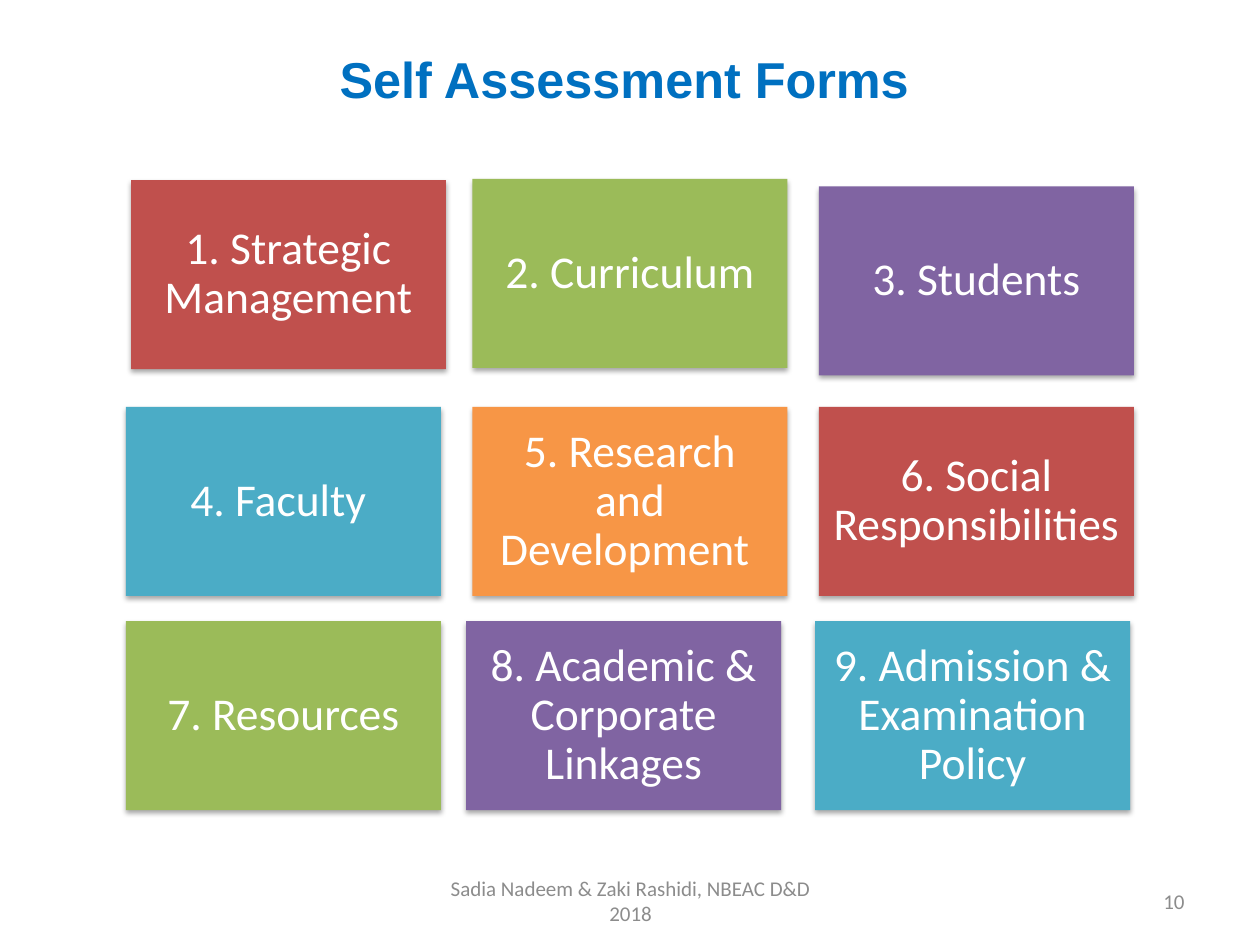
"""Build the Self Assessment Forms slide."""
from lxml.etree import SubElement
from pptx import Presentation
from pptx.dml.color import RGBColor
from pptx.enum.shapes import MSO_SHAPE
from pptx.enum.text import MSO_ANCHOR, PP_ALIGN
from pptx.oxml.ns import qn
from pptx.util import Inches, Pt

WHITE = RGBColor(0xFF, 0xFF, 0xFF)
BLUE = RGBColor(0x00, 0x70, 0xC0)
GRAY = RGBColor(0x8C, 0x8C, 0x8C)
RED = RGBColor(0xC0, 0x50, 0x4D)
GREEN = RGBColor(0x9B, 0xBB, 0x59)
PURPLE = RGBColor(0x80, 0x64, 0xA2)
TEAL = RGBColor(0x4B, 0xAC, 0xC6)
ORANGE = RGBColor(0xF7, 0x96, 0x46)

TITLE = "Self Assessment Forms"
FOOTER = "Sadia Nadeem & Zaki Rashidi, NBEAC D&D 2018"
PAGE_NUMBER = "10"
FORMS = [
    ("1. Strategic Management", 1.04, 1.43),
    ("2. Curriculum", 3.75, 1.42),
    ("3. Students", 6.5, 1.48),
    ("4. Faculty ", 1, 3.23),
    ("5. Research and Development ", 3.75, 3.23),
    ("6. Social Responsibilities", 6.5, 3.23),
    ("7. Resources", 1, 4.93),
    ("8. Academic & Corporate Linkages", 3.7, 4.93),
    ("9. Admission & Examination Policy", 6.47, 4.93),
]
FILLS = [RED, GREEN, PURPLE, TEAL, ORANGE]
TILE_WIDTH, TILE_HEIGHT, TILE_INSET = 2.5, 1.5, 0.11


def write(shape, text, size, color, align=PP_ALIGN.CENTER, font="Calibri", bold=False):
    frame = shape.text_frame
    frame.word_wrap = True
    frame.vertical_anchor = MSO_ANCHOR.MIDDLE
    para = frame.paragraphs[0]
    para.alignment = align
    span = para.add_run()
    span.text = text
    span.font.name = font
    span.font.size = Pt(size)
    span.font.bold = bold
    span.font.color.rgb = color
    return frame


def add_text(page, place, *args, **style):
    box = page.shapes.add_textbox(*map(Inches, place))
    write(box, *args, **style)


def add_shadow(shape):
    shape.shadow.inherit = False
    effects = shape._element.spPr.find(qn("a:effectLst"))
    shadow = SubElement(effects, qn("a:outerShdw"), blurRad=str(Pt(3.1)),
                        dist=str(Pt(1.8)), dir="5400000", rotWithShape="0")
    color = SubElement(shadow, qn("a:srgbClr"), val="000000")
    SubElement(color, qn("a:alpha"), val="35000")


def add_tile(page, text, left, top, fill):
    place = (left, top, TILE_WIDTH, TILE_HEIGHT)
    tile = page.shapes.add_shape(MSO_SHAPE.RECTANGLE, *map(Inches, place))
    tile.fill.solid()
    tile.fill.fore_color.rgb = fill
    tile.line.fill.background()
    add_shadow(tile)
    frame = write(tile, text, 26, WHITE)
    frame.margin_left = frame.margin_right = Inches(TILE_INSET)
    frame.margin_top = frame.margin_bottom = Inches(TILE_INSET)
    frame.paragraphs[0].line_spacing = 0.9


def main():
    deck = Presentation()
    deck.slide_width, deck.slide_height = Inches(10), Inches(7.5)
    page = deck.slides.add_slide(deck.slide_layouts[6])
    add_text(page, (0.33, 0.33, 9.25, 0.58), TITLE, 28.8, BLUE, font="Arial", bold=True)
    for index, (text, left, top) in enumerate(FORMS):
        add_tile(page, text, left, top, FILLS[index % len(FILLS)])
    add_text(page, (3.42, 6.95, 3.17, 0.4), FOOTER, 12, GRAY)
    add_text(page, (7.17, 6.95, 2.33, 0.4), PAGE_NUMBER, 12, GRAY, align=PP_ALIGN.RIGHT)
    deck.save("out.pptx")


if __name__ == "__main__":
    main()
